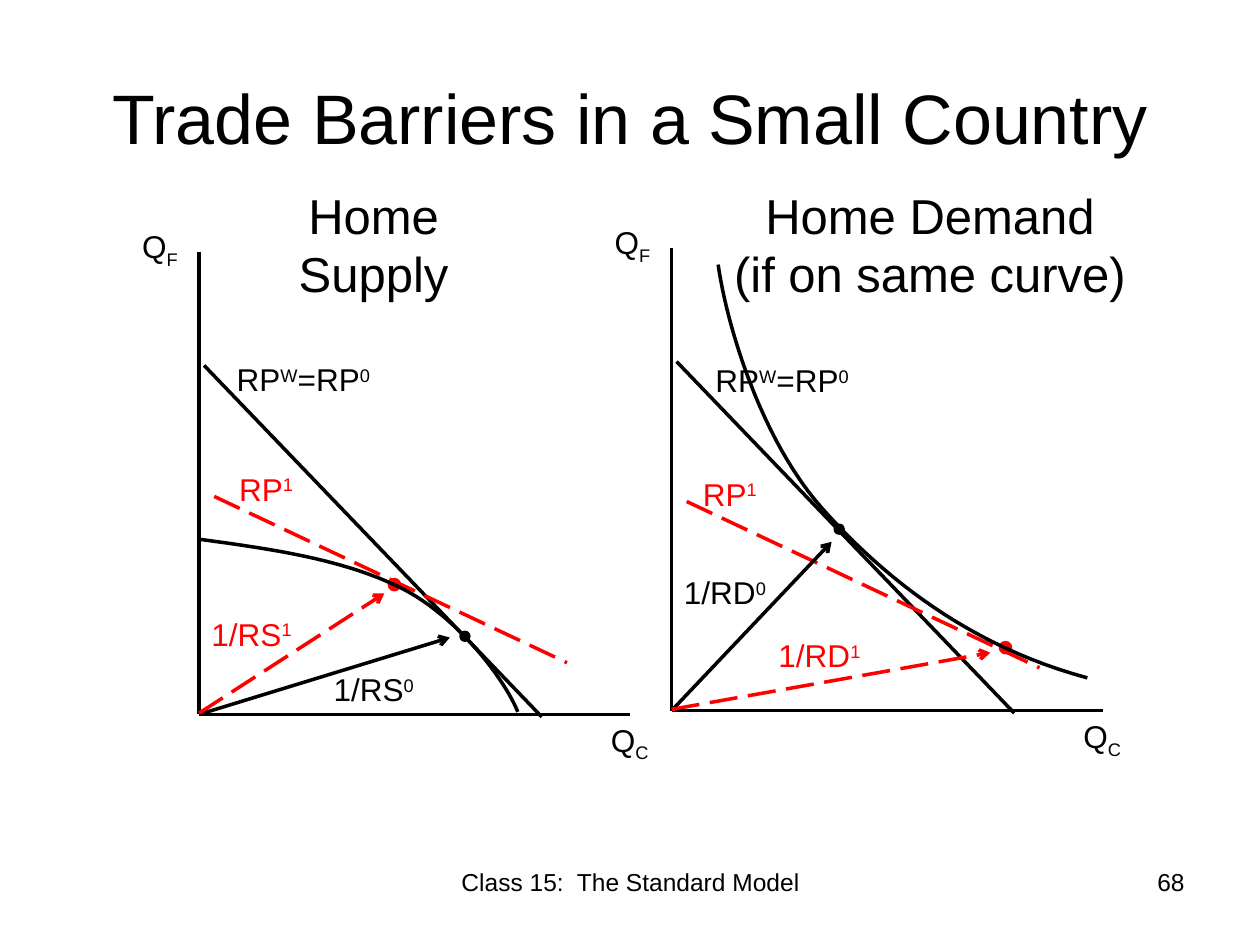
import typing
from dataclasses import dataclass

import pptx
import pptx.dml.color
import pptx.enum.dml
import pptx.enum.shapes
import pptx.enum.text
import pptx.oxml
import pptx.oxml.ns
import pptx.util

BLACK = pptx.dml.color.RGBColor(0, 0, 0)
RED = pptx.dml.color.RGBColor(255, 0, 0)
FONT = "Arial"
ALIGN = pptx.enum.text.PP_ALIGN

# The page is a grid of 100 columns by 75 rows.
WIDTH, HEIGHT = pptx.util.Inches(10), pptx.util.Inches(7.5)
COLUMN, ROW = WIDTH / 100, HEIGHT / 75
SUPERSCRIPT, SUBSCRIPT = 30000, -25000
AXIS_WIDTH, AXIS_HEIGHT = 34.2, 36.7
DOT_SIZE = 0.8
CURVE_STEPS = 24

Point = tuple[float, float]


class Span(typing.NamedTuple):
    text: str
    baseline: int = 0


class Box(typing.NamedTuple):
    left: float
    top: float
    width: float
    height: float


@dataclass(frozen=True)
class Ray:
    """Arrow from the origin, with the dot it points at and its label."""
    tip: Point
    dot: Point
    label: Point
    ratio: str
    state: str
    color: pptx.dml.color.RGBColor
    start: Point = (0, 0)


@dataclass(frozen=True)
class Panel:
    """One diagram; points are columns right of and rows above its origin."""
    origin: Point
    heading: tuple[str, ...]
    heading_box: Box
    curve: tuple[Point, ...]
    tariff_start: Point
    world_label: Point
    tariff_label: Point
    rays: tuple[Ray, ...]

    def on_page(self, point: Point) -> Point:
        return self.origin[0] + point[0], self.origin[1] - point[1]


PANELS = (
    Panel((15.8, 56.7), ("Home Supply",), Box(17.5, 14.2, 24.3, 10.4),
          ((0, 13.9), (5.9, 13.1), (11.5, 12.3), (16.1, 10),
           (20.6, 7.7), (24.3, 2.7), (25.3, 0.2)),
          (1.2, 17.3), (2, 28.6), (2.2, 19.9),
          (Ray((19.9, 6.1), (21.1, 6.2), (9.7, 4), "1/RS", "0", BLACK),
           Ray((14.7, 9.6), (15.5, 10.3), (0, 8.4), "1/RS", "1", RED, (0, 0.1)))),
    Panel((53.3, 56.4), ("Home Demand", "(if on same curve)"),
          Box(56.7, 14.2, 34.2, 10.4),
          ((33, 2.6), (23.7, 5.1), (16.9, 10.5), (12, 16),
           (7.1, 21.5), (4.4, 30.5), (3.7, 35.4)),
          (1.2, 16.6), (2.5, 28.2), (1.5, 19.2),
          (Ray((12.7, 13.4), (13.3, 14.4), (0, 11.4), "1/RD", "0", BLACK),
           Ray((25.3, 4.6), (26.5, 5), (7.5, 6.4), "1/RD", "1", RED, (0, 0.1)))),
)


def emu(box: Box) -> tuple[int, int, int, int]:
    return (round(box.left * COLUMN), round(box.top * ROW),
            round(box.width * COLUMN), round(box.height * ROW))


def write(para, spans: typing.Iterable[Span], size: float, color=BLACK, align=ALIGN.LEFT) -> None:
    para.alignment = align
    for span in spans:
        run = para.add_run()
        run.text = span.text
        run.font.name = FONT
        run.font.size = pptx.util.Pt(size)
        run.font.color.rgb = color
        if span.baseline:
            run.font._element.set("baseline", str(span.baseline))


def add_text(page, box: Box, lines, size: float, color=BLACK, align=ALIGN.LEFT) -> None:
    frame = page.shapes.add_textbox(*emu(box)).text_frame
    frame.word_wrap = True
    for index, spans in enumerate(lines):
        para = frame.add_paragraph() if index else frame.paragraphs[0]
        write(para, spans, size, color, align)


def add_label(page, panel: Panel, corner: Point, spans, color=BLACK) -> None:
    add_text(page, Box(*panel.on_page(corner), 13.5, 4), [spans], 18, color)


def add_line(page, panel: Panel, start: Point, end: Point, color=BLACK, arrow=False) -> None:
    """Red lines are dashed."""
    (x1, y1), (x2, y2) = panel.on_page(start), panel.on_page(end)
    line = page.shapes.add_connector(
        pptx.enum.shapes.MSO_CONNECTOR.STRAIGHT,
        round(x1 * COLUMN), round(y1 * ROW), round(x2 * COLUMN), round(y2 * ROW))
    line.line.color.rgb = color
    line.line.width = pptx.util.Pt(2)
    if color == RED:
        line.line.dash_style = pptx.enum.dml.MSO_LINE.LONG_DASH
    if arrow:
        tail = pptx.oxml.parse_xml(f'<a:tailEnd {pptx.oxml.ns.nsdecls("a")} type="arrow"/>')
        line.line._get_or_add_ln().append(tail)
    line._element.spPr.append(
        pptx.oxml.parse_xml(f'<a:effectLst {pptx.oxml.ns.nsdecls("a")}/>'))


def bezier(a: Point, b: Point, c: Point, d: Point) -> list[Point]:
    """Points along a cubic curve, without its start."""
    points = []
    for step in range(1, CURVE_STEPS + 1):
        t = step / CURVE_STEPS
        weights = ((1 - t) ** 3, 3 * t * (1 - t) ** 2, 3 * t * t * (1 - t), t ** 3)
        points.append((sum(w * p[0] for w, p in zip(weights, (a, b, c, d))),
                       sum(w * p[1] for w, p in zip(weights, (a, b, c, d)))))
    return points


def add_curve(page, panel: Panel) -> None:
    knots = [panel.on_page(point) for point in panel.curve]
    points = [(x * COLUMN, y * ROW)
              for first in range(0, len(knots) - 1, 3)
              for x, y in bezier(*knots[first:first + 4])]
    builder = page.shapes.build_freeform(round(knots[0][0] * COLUMN), round(knots[0][1] * ROW))
    builder.add_line_segments(points, close=False)
    curve = builder.convert_to_shape()
    curve.shadow.inherit = False
    curve.fill.background()
    curve.line.color.rgb = BLACK
    curve.line.width = pptx.util.Pt(2)


def add_dot(page, panel: Panel, center: Point, color) -> None:
    x, y = panel.on_page(center)
    box = Box(x - DOT_SIZE / 2, y - DOT_SIZE / 2, DOT_SIZE, DOT_SIZE)
    dot = page.shapes.add_shape(pptx.enum.shapes.MSO_SHAPE.OVAL, *emu(box))
    dot.shadow.inherit = False
    dot.fill.solid()
    dot.fill.fore_color.rgb = color
    dot.line.color.rgb = color
    dot.line.width = pptx.util.Pt(2 if color == RED else 0.75)


def add_panel(page, panel: Panel) -> None:
    add_line(page, panel, (0, 0), (AXIS_WIDTH, 0))
    add_line(page, panel, (0, 0), (0, AXIS_HEIGHT))
    for corner, good in (((31.7, 0), "C"), ((-5.5, 39.2), "F")):
        add_label(page, panel, corner, [Span("Q"), Span(good, SUBSCRIPT)])
    add_line(page, panel, (0.4, 27.7), (27.2, -0.2))
    add_label(page, panel, panel.world_label,
              [Span("RP"), Span("W", SUPERSCRIPT), Span("=RP"), Span("0", SUPERSCRIPT)])
    x, y = panel.tariff_start
    add_line(page, panel, (x, y), (x + 28, y - 13.2), RED)
    add_label(page, panel, panel.tariff_label, [Span("RP"), Span("1", SUPERSCRIPT)], RED)
    for ray in panel.rays:
        add_dot(page, panel, ray.dot, ray.color)
        add_line(page, panel, ray.start, ray.tip, ray.color, arrow=True)
        add_label(page, panel, ray.label, [Span(ray.ratio), Span(ray.state, SUPERSCRIPT)], ray.color)
    add_curve(page, panel)
    add_text(page, panel.heading_box, [[Span(line)] for line in panel.heading], 28, align=ALIGN.CENTER)


def main() -> None:
    deck = pptx.Presentation()
    deck.slide_width, deck.slide_height = WIDTH, HEIGHT
    page = deck.slides.add_slide(deck.slide_layouts.get_by_name("Title Only"))
    title = page.shapes.title
    title.left, title.top, title.width, title.height = emu(Box(5, 3, 90, 12.5))
    title.text_frame.auto_size = pptx.enum.text.MSO_AUTO_SIZE.NONE
    title.text_frame.vertical_anchor = pptx.enum.text.MSO_ANCHOR.MIDDLE
    write(title.text_frame.paragraphs[0], [Span("Trade Barriers in a Small Country")], 40, align=ALIGN.CENTER)
    for panel in PANELS:
        add_panel(page, panel)
    add_text(page, Box(34.2, 68.3, 31.7, 5.2), [[Span("Class 15:  The Standard Model")]], 14, align=ALIGN.CENTER)
    add_text(page, Box(71.7, 68.3, 23.3, 5.2), [[Span("68")]], 14, align=ALIGN.RIGHT)
    deck.save("out.pptx")


if __name__ == "__main__":
    main()
